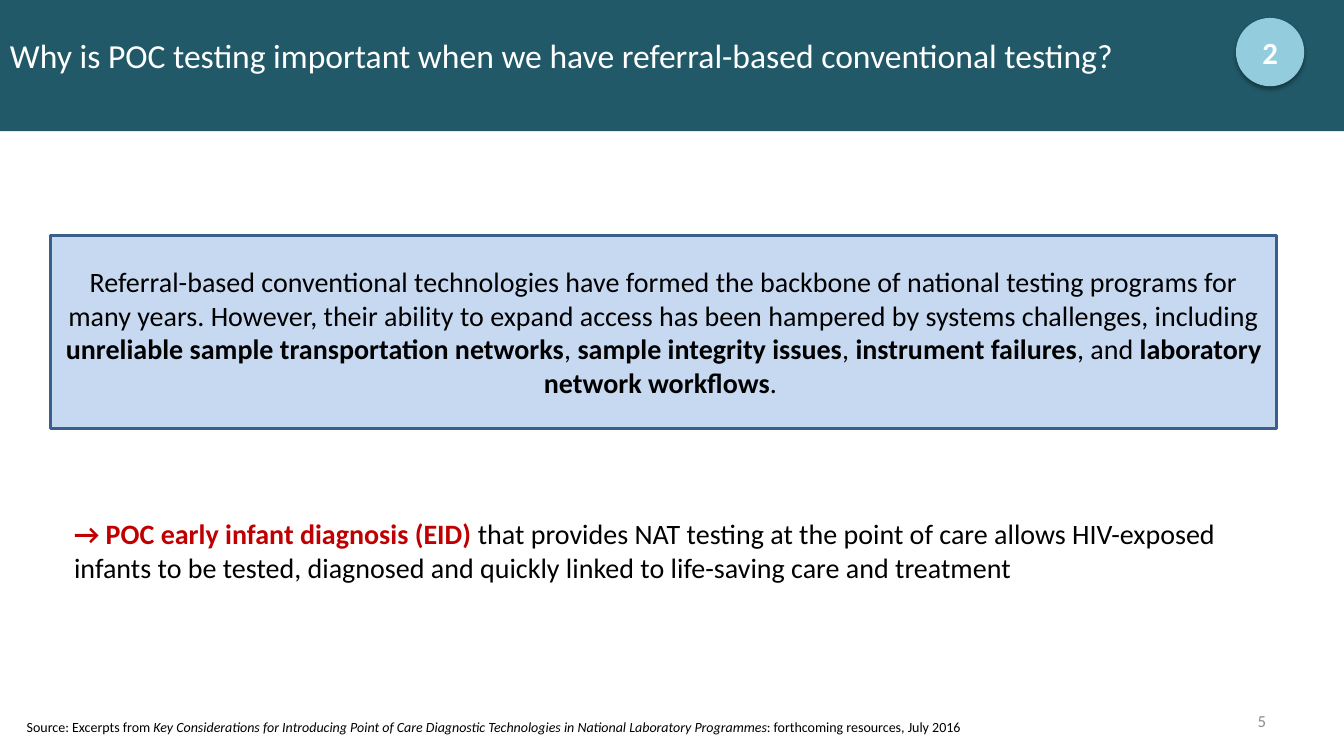
from dataclasses import dataclass
from typing import Optional

from lxml.etree import SubElement
from pptx import Presentation
from pptx.dml.color import RGBColor
from pptx.enum.shapes import MSO_SHAPE
from pptx.enum.text import MSO_ANCHOR, PP_ALIGN
from pptx.oxml.ns import qn
from pptx.util import Emu, Inches, Pt


# Colours and type sizes
@dataclass(frozen=True)
class Theme:
    font: str = "Calibri"
    teal: str = "215968"
    aqua: str = "93CDDD"
    pale: str = "C6D9F1"
    navy: str = "3A5F8C"
    red: str = "C00000"
    gray: str = "8C8C8C"
    white: str = "FFFFFF"
    black: str = "000000"
    title: int = 24
    badge: int = 22
    body: int = 20
    page: int = 12
    note: int = 10


THEME = Theme()

# Grid of square cells, twelve to the inch
COLS, ROWS = 160, 90
WIDE, HIGH = Inches(13.333), Inches(7.5)


@dataclass(frozen=True)
class Span:
    text: str
    bold: bool = False
    slant: bool = False
    color: Optional[str] = None


@dataclass(frozen=True)
class Block:
    col: float
    row: float
    cols: float
    rows: float
    spans: tuple[Span, ...] = ()
    size: int = THEME.body
    color: str = THEME.black
    align: PP_ALIGN = PP_ALIGN.LEFT
    anchor: MSO_ANCHOR = MSO_ANCHOR.MIDDLE
    kind: Optional[MSO_SHAPE] = None
    fill: str = THEME.white
    line: Optional[str] = None
    weight: float = 0
    shade: bool = False


def paint(hue: str) -> RGBColor:
    return RGBColor.from_string(hue)


def cast(shape) -> None:
    """Add a soft shadow that falls straight down."""
    effect = shape._element.spPr.find(qn("a:effectLst"))
    outer = SubElement(effect, qn("a:outerShdw"), blurRad=str(Pt(3.1)),
                       dist=str(Pt(1.8)), dir="5400000", rotWithShape="0")
    hue = SubElement(outer, qn("a:srgbClr"), val=THEME.black)
    SubElement(hue, qn("a:alpha"), val="35000")


def write(frame, block: Block) -> None:
    frame.word_wrap = True
    frame.vertical_anchor = block.anchor
    para = frame.paragraphs[0]
    para.alignment = block.align
    for span in block.spans:
        run = para.add_run()
        run.text = span.text
        font = run.font
        font.name, font.size = THEME.font, Pt(block.size)
        font.bold, font.italic = span.bold, span.slant
        font.color.rgb = paint(span.color or block.color)


def draw(slide, block: Block) -> None:
    box = (Emu(round(WIDE * block.col / COLS)), Emu(round(HIGH * block.row / ROWS)),
           Emu(round(WIDE * block.cols / COLS)), Emu(round(HIGH * block.rows / ROWS)))
    if block.kind is None:
        shape = slide.shapes.add_textbox(*box)
    else:
        shape = slide.shapes.add_shape(block.kind, *box)
        shape.shadow.inherit = False
        shape.fill.solid()
        shape.fill.fore_color.rgb = paint(block.fill)
        if block.line:
            shape.line.color.rgb = paint(block.line)
            shape.line.width = Pt(block.weight)
        else:
            shape.line.fill.background()
        if block.shade:
            cast(shape)
    if block.spans:
        write(shape.text_frame, block)


BLOCKS = (
    # Header band, page number and title
    Block(0, -0.4, COLS, 16, kind=MSO_SHAPE.RECTANGLE, fill=THEME.teal),
    Block(114.6, 83.4, 37.3, 4.8, (Span("5"),), THEME.page, THEME.gray,
          PP_ALIGN.RIGHT),
    Block(0, 0, 159.5, 13, (Span(
        "Why is POC testing important when we have referral-based "
        "conventional testing?"),), THEME.title, THEME.white),
    # Section badge
    Block(147.2, 2.2, 8, 8, (Span("2", bold=True),), THEME.badge, THEME.white,
          PP_ALIGN.CENTER, kind=MSO_SHAPE.OVAL, fill=THEME.aqua,
          line=THEME.aqua, weight=0.75, shade=True),
    # Conclusion
    Block(7, 59, 146, 13, (
        Span("→ POC early infant diagnosis (EID)", bold=True, color=THEME.red),
        Span(" that provides NAT testing at the point of care allows HIV-exposed "
             "infants to be tested, diagnosed and quickly linked to life-saving "
             "care and treatment"),
    ), kind=MSO_SHAPE.ROUNDED_RECTANGLE),
    # Challenges panel
    Block(6, 28, 146, 23, (
        Span("Referral-based conventional technologies have formed the backbone "
             "of national testing programs for many years. However, their ability "
             "to expand access has been hampered by systems challenges, including "),
        Span("unreliable sample transportation networks", bold=True),
        Span(", "),
        Span("sample integrity issues", bold=True),
        Span(", "),
        Span("instrument failures", bold=True),
        Span(", and "),
        Span("laboratory network workflows", bold=True),
        Span(". "),
    ), align=PP_ALIGN.CENTER, kind=MSO_SHAPE.RECTANGLE, fill=THEME.pale,
        line=THEME.navy, weight=2),
    # Source note
    Block(2, 85, 153.2, 3.2, (
        Span("Source: Excerpts from "),
        Span("Key Considerations for Introducing Point of Care Diagnostic "
             "Technologies in National Laboratory Programmes", slant=True),
        Span(": forthcoming resources, July 2016"),
    ), THEME.note, anchor=MSO_ANCHOR.TOP),
)


def main() -> None:
    deck = Presentation()
    deck.slide_width, deck.slide_height = WIDE, HIGH
    slide = deck.slides.add_slide(deck.slide_layouts[6])
    for block in BLOCKS:
        draw(slide, block)
    deck.save("out.pptx")


if __name__ == "__main__":
    main()
